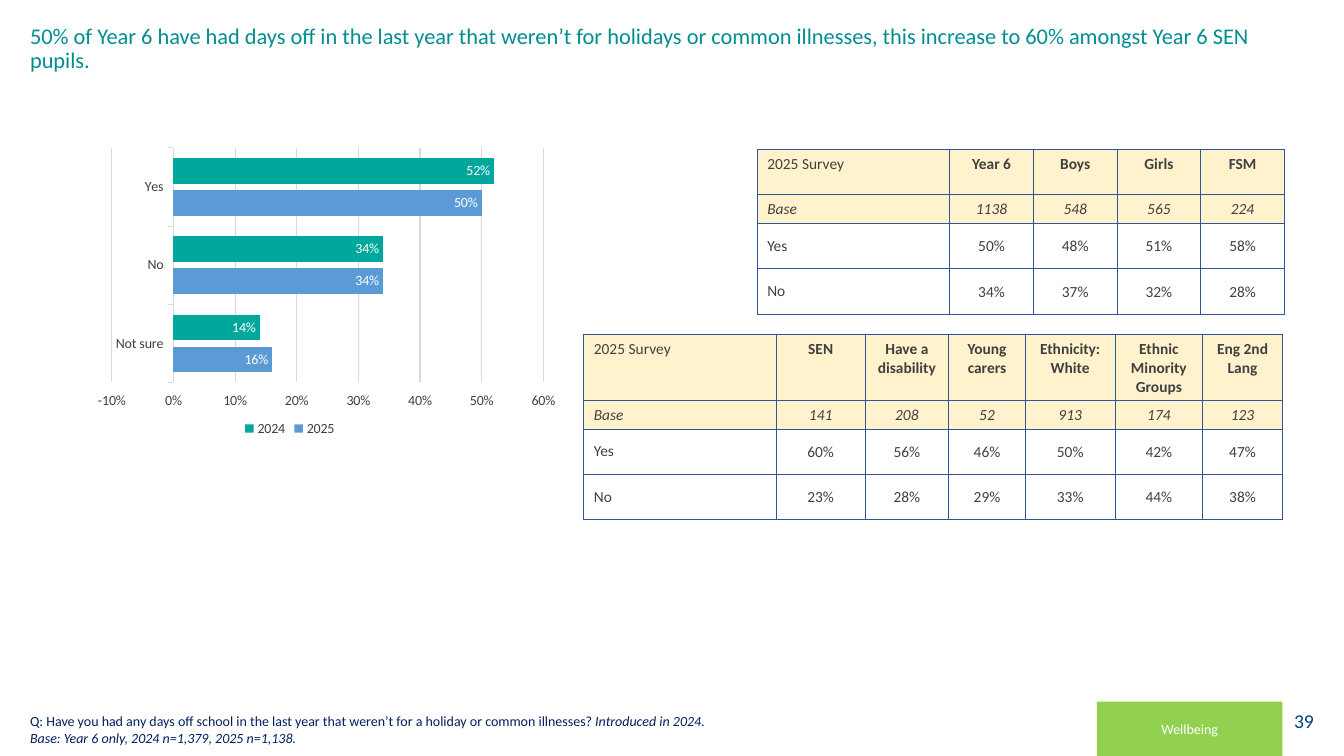
from dataclasses import dataclass

from lxml import etree
from pptx import Presentation
from pptx import util as u
from pptx.chart.data import CategoryChartData
from pptx.dml.color import RGBColor
from pptx.enum import chart as ch, shapes, text
from pptx.oxml import parse_xml
from pptx.oxml.ns import nsdecls, qn

PX = 9144  # 100 px to the inch
FONT = "Calibri"

TEAL = RGBColor(0x00, 0x8E, 0x91)
MINT = RGBColor(0x00, 0xA7, 0x9D)
BLUE = RGBColor(0x5B, 0x9B, 0xD5)
NAVY = RGBColor(0x00, 0x20, 0x60)
STEEL = RGBColor(0x00, 0x43, 0x76)
EDGE = RGBColor(0x2F, 0x55, 0x97)
CREAM = RGBColor(0xFF, 0xF2, 0xCC)
LIME = RGBColor(0x92, 0xD0, 0x50)
INK = RGBColor(0x40, 0x40, 0x40)
GRID = RGBColor(0xD9, 0xD9, 0xD9)
BLACK = RGBColor(0, 0, 0)
WHITE = RGBColor(0xFF, 0xFF, 0xFF)

LEFT, MID, RIGHT = text.PP_ALIGN.LEFT, text.PP_ALIGN.CENTER, text.PP_ALIGN.RIGHT


@dataclass
class Box:
    x: int
    y: int
    w: int
    h: int

    def emu(self) -> list[int]:
        return [n * PX for n in (self.x, self.y, self.w, self.h)]


@dataclass
class Panel:
    box: Box
    label: str
    fill: RGBColor
    size: int
    color: RGBColor
    align: text.PP_ALIGN


@dataclass
class Grid:
    box: Box
    cols: list[int]
    rows: list[list[str]]


@dataclass
class Series:
    name: str
    vals: list[float]
    color: RGBColor


HEIGHTS = [45, 27, 45, 45]

GRIDS = [
    Grid(Box(751, 148, 522, 164), [191, 83, 83, 83, 83], [
        ["2025 Survey", "Year 6", "Boys", "Girls", "FSM"],
        ["Base", "1138", "548", "565", "224"],
        ["Yes", "50%", "48%", "51%", "58%"],
        ["No", "34%", "37%", "32%", "28%"],
    ]),
    Grid(Box(579, 332, 693, 184), [191, 88, 83, 76, 89, 87, 79], [
        ["2025 Survey", "SEN", "Have a disability", "Young carers",
         "Ethnicity: White", "Ethnic Minority Groups", "Eng 2nd Lang"],
        ["Base", "141", "208", "52", "913", "174", "123"],
        ["Yes", "60%", "56%", "46%", "50%", "42%", "47%"],
        ["No", "23%", "28%", "29%", "33%", "44%", "38%"],
    ]),
]

PANELS = [
    Panel(Box(1254, 695, 59, 40), "39", WHITE, 14, STEEL, RIGHT),
    Panel(Box(1088, 696, 184, 54), "Wellbeing", LIME, 10, WHITE, MID),
]

BARS = [
    Series("2025", [0.16, 0.34, 0.5], BLUE),
    Series("2024", [0.14, 0.34, 0.52], MINT),
]


def style(font, size: int, color: RGBColor) -> None:
    font.name, font.size = FONT, u.Pt(size)
    font.color.rgb = color


def add_text(slide, box: Box, lines: list[list[str]], size: int, color: RGBColor):
    """Place a wrapped text box with one paragraph per list of runs."""
    frame = slide.shapes.add_textbox(*box.emu()).text_frame
    frame.word_wrap = True
    for i, runs in enumerate(lines):
        para = frame.add_paragraph() if i else frame.paragraphs[0]
        for words in runs:
            para.add_run().text = words
        style(para.font, size, color)
    return frame


def add_panel(slide, panel: Panel) -> None:
    shape = slide.shapes.add_shape(shapes.MSO_SHAPE.RECTANGLE, *panel.box.emu())
    shape.shadow.inherit = False
    shape.fill.solid()
    shape.fill.fore_color.rgb = panel.fill
    shape.line.fill.background()
    shape.text_frame.vertical_anchor = text.MSO_ANCHOR.MIDDLE
    para = shape.text_frame.paragraphs[0]
    para.text, para.alignment = panel.label, panel.align
    style(para.font, panel.size, panel.color)


def add_edges(cell) -> None:
    """Draw the four borders; they must come before the cell fill."""
    props = cell._tc.get_or_add_tcPr()
    for i, side in enumerate(("lnL", "lnR", "lnT", "lnB")):
        props.insert(i, parse_xml(
            f'<a:{side} {nsdecls("a")} w="6350"><a:solidFill>'
            f'<a:srgbClr val="{EDGE}"/></a:solidFill></a:{side}>'))


def add_grid(slide, grid: Grid) -> None:
    table = slide.shapes.add_table(
        len(grid.rows), len(grid.cols), *grid.box.emu()).table
    table.first_row = table.horz_banding = False
    for col, width in zip(table.columns, grid.cols):
        col.width = width * PX
    for r, (row, height) in enumerate(zip(grid.rows, HEIGHTS)):
        table.rows[r].height = height * PX
        for c, words in enumerate(row):
            cell = table.cell(r, c)
            if r < 2:
                cell.fill.solid()
                cell.fill.fore_color.rgb = CREAM
            else:
                cell.fill.background()
            if r:
                cell.vertical_anchor = text.MSO_ANCHOR.MIDDLE
            if r > 1 and c:
                cell.margin_left = cell.margin_right = cell.margin_top = PX
                cell.margin_bottom = 0
            para = cell.text_frame.paragraphs[0]
            para.text, para.alignment = words, MID if c else LEFT
            style(para.font, 11, INK)
            para.font.bold = r == 0 and c > 0
            para.font.italic = r == 1
            add_edges(cell)


def set_plot(chart, **place: float) -> None:
    """Fix the inner plot area, in fractions of the chart."""
    area = chart._chartSpace.chart.plotArea
    for old in area.findall(qn("c:layout")):
        area.remove(old)
    layout = etree.Element(qn("c:layout"))
    manual = etree.SubElement(layout, qn("c:manualLayout"))
    rules = {"layoutTarget": "inner", "xMode": "edge", "yMode": "edge", **place}
    for tag, val in rules.items():
        etree.SubElement(manual, qn(f"c:{tag}")).set("val", str(val))
    area.insert(0, layout)


def add_bars(slide, box: Box, bars: list[Series]) -> None:
    data = CategoryChartData(number_format="0%")
    data.categories = ["Not sure", "No", "Yes"]
    for bar in bars:
        data.add_series(bar.name, bar.vals)
    chart = slide.shapes.add_chart(
        ch.XL_CHART_TYPE.BAR_CLUSTERED, *box.emu(), data).chart
    chart.has_title = False
    style(chart.font, 10, BLACK)
    set_plot(chart, x=0.17, y=0.09, w=0.8, h=0.73)

    # Legend
    chart.has_legend = True
    chart.legend.position = ch.XL_LEGEND_POSITION.BOTTOM
    chart.legend.include_in_layout = False
    style(chart.legend.font, 10, INK)

    # Axes
    cat, val = chart.category_axis, chart.value_axis
    for axis in (cat, val):
        style(axis.tick_labels.font, 10, INK)
        axis.major_tick_mark = ch.XL_TICK_MARK.OUTSIDE
    val.minimum_scale, val.maximum_scale, val.major_unit = -0.1, 0.6, 0.1
    val.tick_labels.number_format = "0%"
    val.tick_labels.number_format_is_linked = False
    val.format.line.fill.background()
    for line in (cat.format.line, val.major_gridlines.format.line):
        line.color.rgb, line.width = GRID, u.Pt(0.75)

    # Bars and their labels
    plot = chart.plots[0]
    plot.vary_by_categories = False
    plot.gap_width, plot.overlap = 80, -25
    for series, bar in zip(plot.series, bars):
        series.format.fill.solid()
        series.format.fill.fore_color.rgb = bar.color
        labels = series.data_labels
        labels.show_value = True
        labels.position = ch.XL_LABEL_POSITION.INSIDE_END
        labels.number_format, labels.number_format_is_linked = "0%", False
        style(labels.font, 10, WHITE)


def main() -> None:
    deck = Presentation()
    deck.slide_width, deck.slide_height = 1333 * PX, 750 * PX
    slide = deck.slides.add_slide(deck.slide_layouts[6])

    # Heading
    head = add_text(slide, Box(20, 20, 1244, 98), [[
        "50% of Year 6 have had days off in the last year that weren’t for holidays "
        "or common illnesses, this increase to 60% amongst Year 6 SEN pupils."]], 16, TEAL)
    head.paragraphs[0].line_spacing = 0.9

    # Question and base
    foot = add_text(slide, Box(20, 701, 879, 44), [
        ["Q: Have you had any days off school in the last year that weren’t for a "
         "holiday or common illnesses? ", "Introduced in 2024."],
        ["Base: Year 6 only, 2024 n=1,379, 2025 n=1,138."]], 10, NAVY)
    foot.vertical_anchor = text.MSO_ANCHOR.BOTTOM
    foot.paragraphs[0].runs[1].font.italic = True
    foot.paragraphs[1].font.italic = True

    for grid in GRIDS:
        add_grid(slide, grid)
    for panel in PANELS:
        add_panel(slide, panel)
    add_bars(slide, Box(20, 118, 535, 319), BARS)
    deck.save("out.pptx")


if __name__ == "__main__":
    main()
